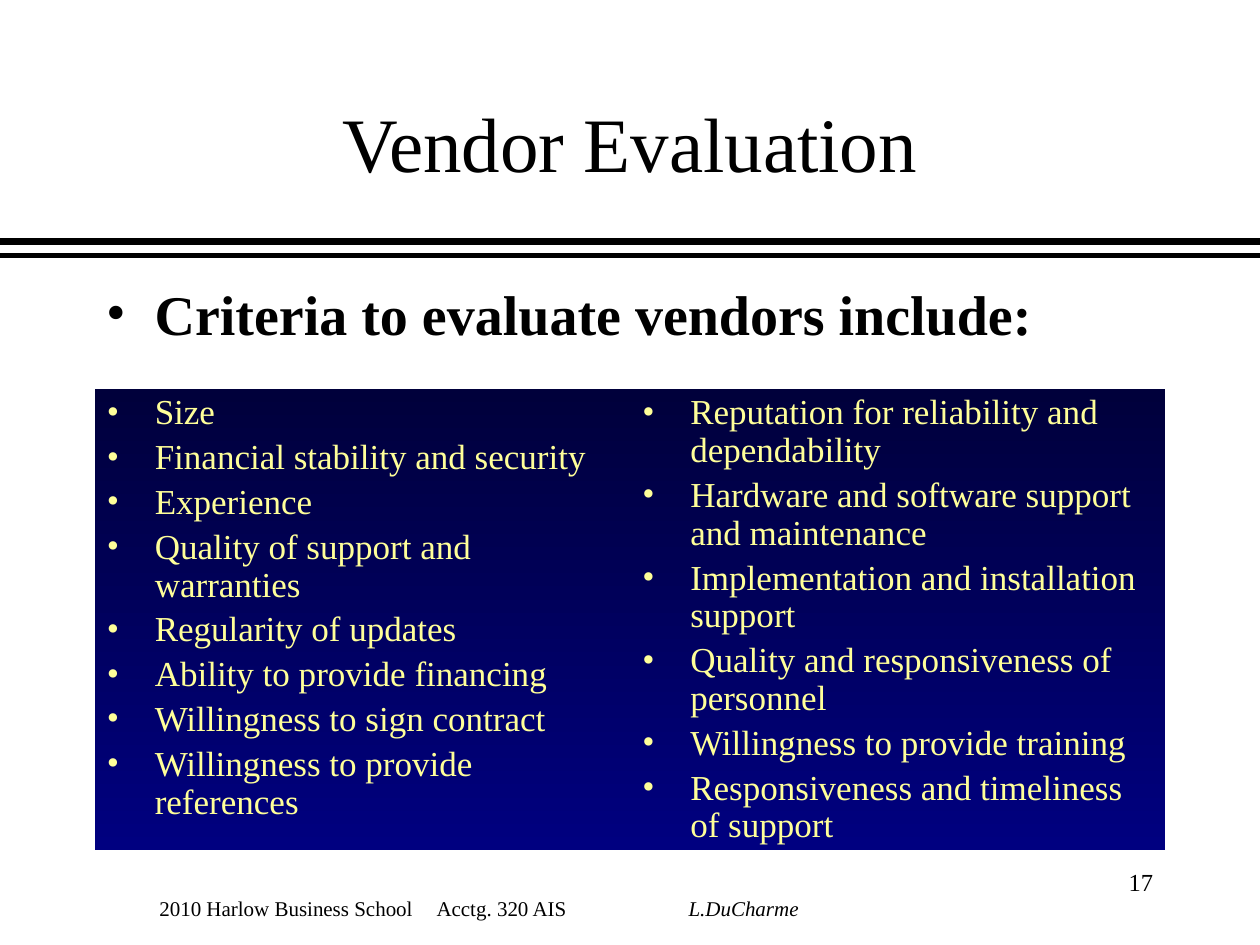
from lxml.etree import SubElement
from pptx import Presentation
from pptx.dml.color import RGBColor
from pptx.enum.shapes import MSO_CONNECTOR, MSO_SHAPE
from pptx.enum.text import MSO_ANCHOR, PP_ALIGN
from pptx.oxml.ns import qn
from pptx.util import Inches, Pt

FONT = "Times New Roman"
BLACK, CREAM, DARK, NAVY = "000000", "FFFF99", "00003B", "000080"
LEFT = [
    "Size",
    "Financial stability and security",
    "Experience",
    "Quality of support and warranties",
    "Regularity of updates",
    "Ability to provide financing",
    "Willingness to sign contract",
    "Willingness to provide references",
]
RIGHT = [
    "Reputation for reliability and dependability",
    "Hardware and software support and maintenance",
    "Implementation and installation support",
    "Quality and responsiveness of personnel",
    "Willingness to provide training",
    "Responsiveness and timeliness of support",
]


def unit(count):
    """Turn grid steps, twelve to the inch, into a length."""
    return Inches(count / 12)


def tint(code):
    """Turn a hex string into a colour."""
    return RGBColor.from_string(code)


def add_run(para, text, size, color=BLACK, bold=False, italic=False):
    """Add one styled run to a paragraph."""
    run = para.add_run()
    run.text = text
    font = run.font
    font.name, font.size = FONT, Pt(size)
    font.bold, font.italic = bold, italic
    font.color.rgb = tint(color)


def add_box(slide, box, anchor=MSO_ANCHOR.TOP):
    """Add a wrapping text box and return its frame."""
    frame = slide.shapes.add_textbox(*map(unit, box)).text_frame
    frame.word_wrap = True
    frame.vertical_anchor = anchor
    return frame


def add_list(frame, items, size, color, bold=False, lead=1.0):
    """Fill a frame with bulleted paragraphs."""
    for num, item in enumerate(items):
        para = frame.add_paragraph() if num else frame.paragraphs[0]
        para.alignment = PP_ALIGN.LEFT
        para.line_spacing = lead
        para.space_before = Pt(size * 0.2)
        props = para._p.get_or_add_pPr()
        props.set("marL", str(Inches(0.38)))
        props.set("indent", str(-Inches(0.38)))
        SubElement(props, qn("a:buFont"), typeface=FONT)
        SubElement(props, qn("a:buChar"), char="•")
        add_run(para, item, size, color, bold)


def add_rules(slide, box):
    """Draw the heavy rule at the top of the box and the thin one below."""
    left, top, width, height = box
    for row, weight in ((top, 3.5), (top + height, 3)):
        ends = map(unit, (left, row, left + width, row))
        rule = slide.shapes.add_connector(MSO_CONNECTOR.STRAIGHT, *ends)
        rule.line.color.rgb = tint(BLACK)
        rule.line.width = Pt(weight)
        SubElement(rule._element.spPr, qn("a:effectLst"))


def add_title(slide, box):
    """Place the centred title."""
    para = add_box(slide, box, MSO_ANCHOR.MIDDLE).paragraphs[0]
    para.alignment = PP_ALIGN.CENTER
    add_run(para, "Vendor Evaluation", 44)


def add_panels(slide, box):
    """Split the box into equal panels, one for each list."""
    left, top, width, height = box
    lists = (LEFT, RIGHT)
    step = width / len(lists)
    for num, items in enumerate(lists):
        place = map(unit, (left + num * step, top, step, height))
        panel = slide.shapes.add_shape(MSO_SHAPE.RECTANGLE, *place)
        panel.shadow.inherit = False
        panel.line.fill.background()
        panel.fill.gradient()
        panel.fill.gradient_angle = 270
        for stop, code in zip(panel.fill.gradient_stops, (DARK, NAVY)):
            stop.color.rgb = tint(code)
        frame = panel.text_frame
        frame.word_wrap = True
        frame.vertical_anchor = MSO_ANCHOR.TOP
        add_list(frame, items, 20, CREAM, lead=0.9)


def add_footer(slide, box):
    """Place the course line, its parts set on tab stops."""
    para = add_box(slide, box, MSO_ANCHOR.BOTTOM).paragraphs[0]
    tabs = SubElement(para._p.get_or_add_pPr(), qn("a:tabLst"))
    for stop in (2.2, 4.2):
        SubElement(tabs, qn("a:tab"), pos=str(Inches(stop)), algn="l")
    add_run(para, "2010 Harlow Business School\tAcctg. 320 AIS\t", 12)
    add_run(para, "L.DuCharme", 12, italic=True)


def add_number(slide, box):
    """Place the slide number at the right."""
    para = add_box(slide, box).paragraphs[0]
    para.alignment = PP_ALIGN.RIGHT
    add_run(para, "17", 14)


def main():
    """Build and save the slide."""
    deck = Presentation()
    deck.slide_width, deck.slide_height = unit(120), unit(90)
    slide = deck.slides.add_slide(deck.slide_layouts[6])
    add_rules(slide, (0, 23, 120, 1.36))
    add_footer(slide, (14, 82.3, 72, 6))
    add_title(slide, (9, 6, 102, 15))
    add_number(slide, (101, 82, 10, 6))
    body = add_box(slide, (9, 26, 102, 54))
    add_list(body, ["Criteria to evaluate vendors include:"], 32, BLACK, bold=True)
    add_panels(slide, (9, 37, 102, 44))
    deck.save("out.pptx")


if __name__ == "__main__":
    main()
